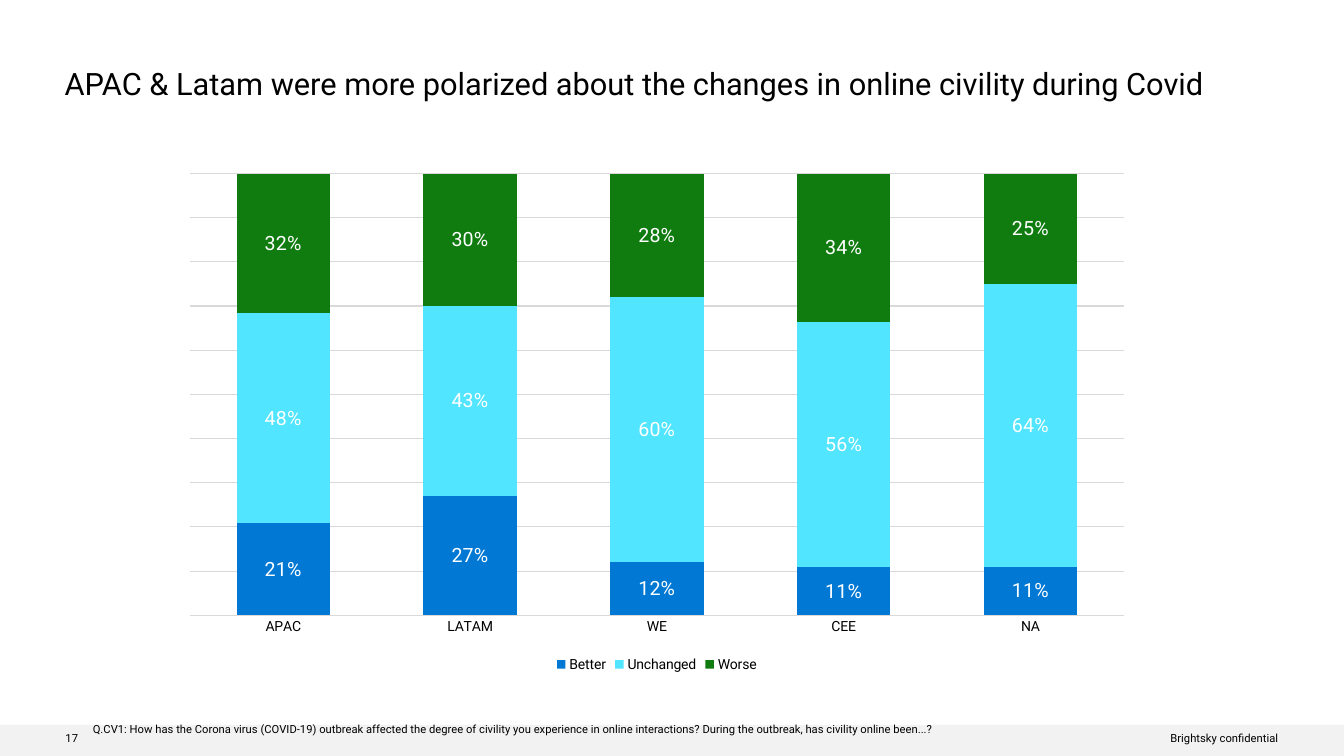
import pptx
import pptx.chart.data
import pptx.dml.color
import pptx.enum.chart
import pptx.enum.shapes
import pptx.enum.text
import pptx.util
from dataclasses import dataclass

PX = 9144  # 100 px to the inch


@dataclass(frozen=True)
class Theme:
    font: str = "Roboto"
    text: str = "000000"
    label: str = "FFFFFF"
    band: str = "F2F2F2"
    grid: str = "D9D9D9"
    title_size: int = 22
    label_size: int = 14
    axis_size: int = 10
    small_size: int = 8


THEME = Theme()

REGIONS = ["APAC", "LATAM", "WE", "CEE", "NA"]
ANSWERS = [
    ("Better", "0078D4", [0.21, 0.27, 0.12, 0.11, 0.11]),
    ("Unchanged", "51E5FF", [0.48, 0.43, 0.60, 0.56, 0.64]),
    ("Worse", "107C10", [0.32, 0.30, 0.28, 0.34, 0.25]),
]
TITLE = "APAC & Latam were more polarized about the changes in online civility during Covid"
QUESTION = (
    "Q.CV1: How has the Corona virus (COVID-19) outbreak affected the degree of civility "
    "you experience in online interactions? During the outbreak, has civility online been...?"
)


def emu(box):
    return [length * PX for length in box]


def rgb(color):
    return pptx.dml.color.RGBColor.from_string(color)


def style_font(font, size, color=THEME.text):
    font.name = THEME.font
    font.size = pptx.util.Pt(size)
    font.color.rgb = rgb(color)


def add_text(slide, box, text, size, align=pptx.enum.text.PP_ALIGN.LEFT, line_spacing=1.0, wrap=True):
    frame = slide.shapes.add_textbox(*emu(box)).text_frame
    frame.word_wrap = wrap
    frame.margin_left = frame.margin_top = frame.margin_right = frame.margin_bottom = 0
    paragraph = frame.paragraphs[0]
    paragraph.alignment = align
    paragraph.line_spacing = line_spacing
    run = paragraph.add_run()
    run.text = text
    style_font(run.font, size)


def add_footer(slide, box):
    left, top, width, height = box
    band = slide.shapes.add_shape(pptx.enum.shapes.MSO_SHAPE.RECTANGLE, *emu(box))
    band.shadow.inherit = False
    band.fill.solid()
    band.fill.fore_color.rgb = rgb(THEME.band)
    band.line.fill.background()
    margin, text_top = 65, top + 8
    add_text(slide, (left + margin, text_top, 500, 12), "17", THEME.small_size, line_spacing=0.9)
    add_text(slide, (left + width - margin - 367, text_top, 367, 12), "Brightsky confidential",
             THEME.small_size, pptx.enum.text.PP_ALIGN.RIGHT, 0.9)
    add_text(slide, (left + 92, top - 2, 848, 14), QUESTION, THEME.small_size, wrap=False)


def add_civility_chart(slide, box):
    data = pptx.chart.data.CategoryChartData(number_format="0%")
    data.categories = REGIONS
    for name, _, shares in ANSWERS:
        data.add_series(name, shares)
    kind = pptx.enum.chart.XL_CHART_TYPE.COLUMN_STACKED_100
    chart = slide.shapes.add_chart(kind, *emu(box), data).chart
    style_font(chart.font, THEME.axis_size)
    chart.has_title = False
    chart.has_legend = True
    chart.legend.position = pptx.enum.chart.XL_LEGEND_POSITION.BOTTOM
    chart.legend.include_in_layout = False
    style_font(chart.legend.font, THEME.axis_size)
    style_axes(chart)

    plot = chart.plots[0]
    plot.gap_width = 100
    plot.overlap = 100
    plot.vary_by_categories = False
    for series, (_, color, _) in zip(plot.series, ANSWERS):
        series.format.fill.solid()
        series.format.fill.fore_color.rgb = rgb(color)
        labels = series.data_labels
        labels.show_value = True
        labels.number_format = "0%"
        labels.number_format_is_linked = False
        labels.position = pptx.enum.chart.XL_LABEL_POSITION.CENTER
        style_font(labels.font, THEME.label_size, THEME.label)


def style_axes(chart):
    category_axis, value_axis = chart.category_axis, chart.value_axis
    category_axis.major_tick_mark = pptx.enum.chart.XL_TICK_MARK.NONE
    style_font(category_axis.tick_labels.font, THEME.axis_size)
    value_axis.visible = False
    value_axis.minimum_scale = 0
    value_axis.maximum_scale = 1
    value_axis.major_unit = 0.1
    value_axis.has_major_gridlines = True
    for line in (category_axis.format.line, value_axis.major_gridlines.format.line):
        line.color.rgb = rgb(THEME.grid)
        line.width = pptx.util.Pt(0.75)


def main():
    presentation = pptx.Presentation()
    presentation.slide_width, presentation.slide_height = emu((1333, 750))
    slide = presentation.slides.add_slide(presentation.slide_layouts[6])
    add_footer(slide, (0, 719, 1333, 31))
    add_text(slide, (64, 64, 1141, 74), TITLE, THEME.title_size)
    add_civility_chart(slide, (169, 162, 965, 509))
    presentation.save("out.pptx")


if __name__ == "__main__":
    main()
